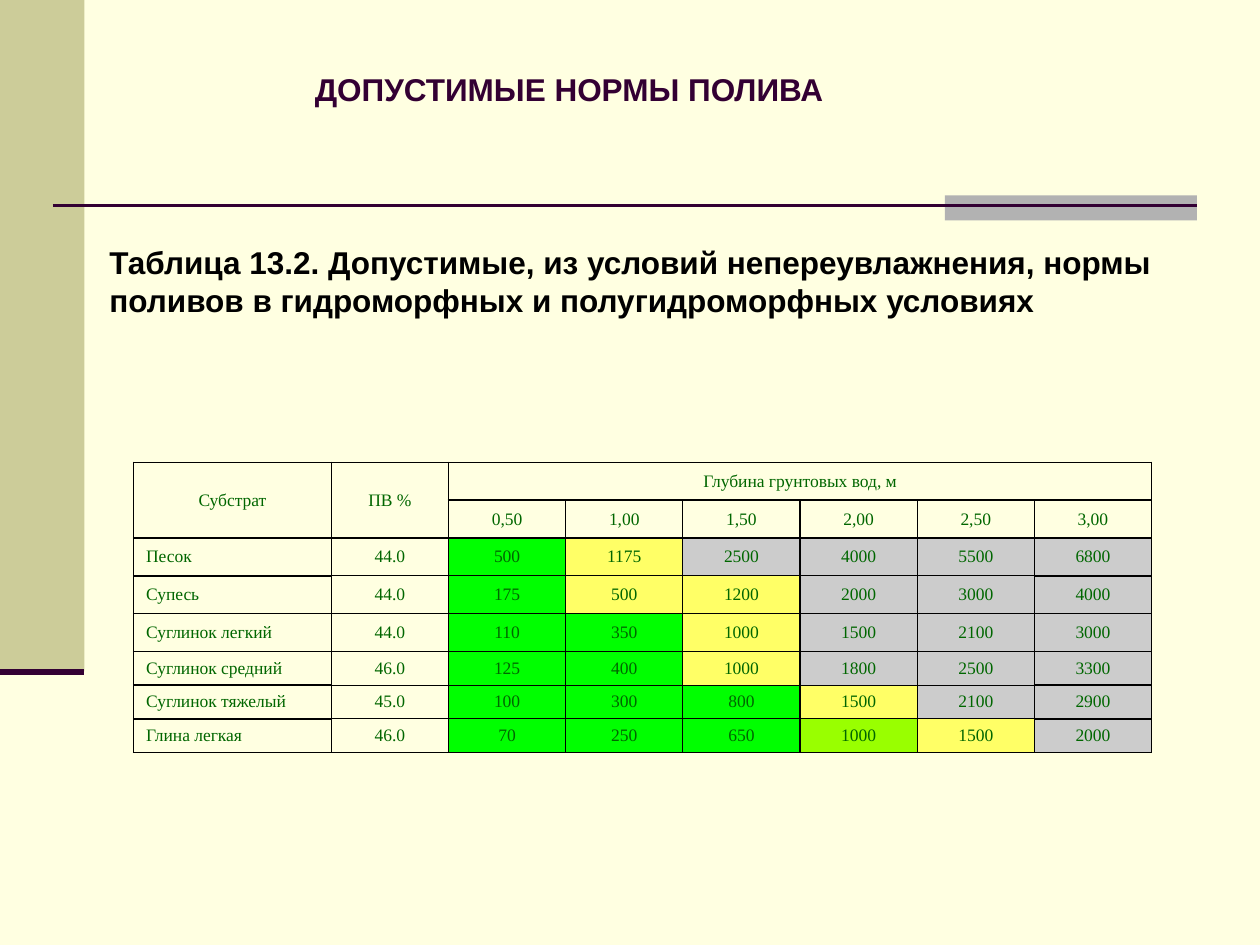
from dataclasses import dataclass
from typing import NamedTuple

from lxml.etree import SubElement as Sub
from pptx import Presentation
from pptx.dml.color import RGBColor as Rgb
from pptx.enum.shapes import MSO_CONNECTOR as Link, MSO_SHAPE as Kind
from pptx.enum.text import MSO_ANCHOR as Anchor, PP_ALIGN as Align
from pptx.oxml.ns import qn
from pptx.util import Inches, Pt


@dataclass(frozen=True)
class Theme:
    back: str = "FFFFE1"
    side: str = "CCCC99"
    tab: str = "B2B2B2"
    plum: str = "330033"
    ink: str = "000000"
    cell: str = "006600"
    head: str = "Arial"
    body: str = "Times New Roman"
    big: float = 18
    small: float = 10
    thin: float = 0.75
    thick: float = 1


class Box(NamedTuple):
    x: float
    y: float
    w: float
    h: float


class Bar(NamedTuple):
    box: Box
    fill: str


class Rule(NamedTuple):
    x1: float
    x2: float
    y: float
    width: float


class Soil(NamedTuple):
    name: str
    cap: str
    rates: tuple[int, ...]
    tints: str


THEME = Theme()
TINTS = {"g": "00FF00", "l": "99FF00", "y": "FFFF66", "s": "CCCCCC"}
BARS = [
    Bar(Box(0, 0, 0.67, 5.33), THEME.side),
    Bar(Box(7.5, 1.55, 2, 0.2), THEME.tab),
]
RULES = [Rule(0.42, 9.5, 1.63, 1.5), Rule(0, 0.67, 5.33, 3.5)]
DEPTHS = ["0,50", "1,00", "1,50", "2,00", "2,50", "3,00"]
SOILS = [
    Soil("Песок", "44.0", (500, 1175, 2500, 4000, 5500, 6800), "gyssss"),
    Soil("Супесь", "44.0", (175, 500, 1200, 2000, 3000, 4000), "gyysss"),
    Soil("Суглинок легкий", "44.0", (110, 350, 1000, 1500, 2100, 3000), "ggysss"),
    Soil("Суглинок средний", "46.0", (125, 400, 1000, 1800, 2500, 3300), "ggysss"),
    Soil("Суглинок тяжелый", "45.0", (100, 300, 800, 1500, 2100, 2900), "gggyss"),
    Soil("Глина легкая", "46.0", (70, 250, 650, 1000, 1500, 2000), "ggglys"),
]
COLS = [1.57] + [0.93] * 7
ROWS = [0.3] * 5 + [0.25] * 3


def rgb(code: str) -> Rgb:
    return Rgb.from_string(code)


def place(box: Box) -> list[Inches]:
    return [Inches(v) for v in box]


def style(para, face: str, size: float, color: str, bold: bool = False) -> None:
    font = para.font
    font.name, font.size, font.bold = face, Pt(size), bold
    font.color.rgb = rgb(color)


def draw_bar(slide, bar: Bar) -> None:
    shape = slide.shapes.add_shape(Kind.RECTANGLE, *place(bar.box))
    shape.shadow.inherit = False
    shape.fill.solid()
    shape.fill.fore_color.rgb = rgb(bar.fill)
    shape.line.fill.background()


def draw_rule(slide, rule: Rule) -> None:
    y = Inches(rule.y)
    line = slide.shapes.add_connector(
        Link.STRAIGHT, Inches(rule.x1), y, Inches(rule.x2), y)
    line.line.color.rgb = rgb(THEME.plum)
    line.line.width = Pt(rule.width)
    Sub(line._element.spPr, qn("a:effectLst"))


def draw_text(slide, box: Box, text: str, color: str, anchor: Anchor):
    frame = slide.shapes.add_textbox(*place(box)).text_frame
    frame.word_wrap = True
    frame.vertical_anchor = anchor
    para = frame.paragraphs[0]
    para.text = text
    style(para, THEME.head, THEME.big, color, True)
    return para


def edge(cell, side: str, width: float) -> None:
    props = cell._tc.get_or_add_tcPr()
    line = Sub(props, qn(f"a:ln{side}"), w=str(Pt(width)))
    Sub(Sub(line, qn("a:solidFill")), qn("a:srgbClr"), val=THEME.ink)


def frame_cell(cell, row: int, col: int) -> None:
    """Outer columns and the top row are heavier, as are edges they share."""
    heavy = row == 0 or col in (0, 7)
    shared = {"L": col == 1 or (row == 1 and col == 2),
              "R": col == 6, "T": row == 1, "B": False}
    for side, near in shared.items():
        edge(cell, side, THEME.thick if heavy or near else THEME.thin)


def fill_cell(cell, text: str, tint: str | None, align: Align) -> None:
    if tint:
        cell.fill.solid()
        cell.fill.fore_color.rgb = rgb(tint)
    else:
        cell.fill.background()
    cell.vertical_anchor = Anchor.MIDDLE
    para = cell.text_frame.paragraphs[0]
    para.text = text
    para.alignment = align
    style(para, THEME.body, THEME.small, THEME.cell)


def draw_table(slide) -> None:
    box = Box(1.06, 3.67, sum(COLS), sum(ROWS))
    table = slide.shapes.add_table(len(ROWS), len(COLS), *place(box)).table
    table.first_row = table.horz_banding = False
    for col, width in zip(table.columns, COLS):
        col.width = Inches(width)
    for row, height in zip(table.rows, ROWS):
        row.height = Inches(height)

    # Two header rows, then one row per soil
    texts = [["Субстрат", "ПВ %", "Глубина грунтовых вод, м"] + [""] * 5,
             ["", ""] + DEPTHS]
    texts += [[s.name, s.cap, *map(str, s.rates)] for s in SOILS]
    for r, line in enumerate(texts):
        for c, text in enumerate(line):
            cell = table.cell(r, c)
            frame_cell(cell, r, c)
            data = r > 1 and c > 1
            tint = TINTS[SOILS[r - 2].tints[c - 2]] if data else None
            align = Align.LEFT if r > 1 and c == 0 else Align.CENTER
            fill_cell(cell, text, tint, align)

    # Merged headings
    for c in (0, 1):
        table.cell(0, c).merge(table.cell(1, c))
    table.cell(0, 2).merge(table.cell(0, 7))


def main() -> None:
    deck = Presentation()
    deck.slide_width, deck.slide_height = Inches(10), Inches(7.5)
    slide = deck.slides.add_slide(deck.slide_layouts[6])
    slide.background.fill.solid()
    slide.background.fill.fore_color.rgb = rgb(THEME.back)

    # Side band, tab and rules
    for bar in BARS:
        draw_bar(slide, bar)
    for rule in RULES:
        draw_rule(slide, rule)

    # Title, table and its caption
    draw_text(slide, Box(2.4, 0.44, 4.68, 0.53), "ДОПУСТИМЫЕ НОРМЫ ПОЛИВА",
              THEME.plum, Anchor.MIDDLE)
    draw_table(slide)
    note = draw_text(
        slide, Box(0.27, 1.88, 8.98, 1),
        "Таблица 13.2. Допустимые, из условий непереувлажнения, нормы "
        "поливов в гидроморфных и полугидроморфных условиях",
        THEME.ink, Anchor.TOP)
    note.space_before = Pt(3.6)
    note._p.get_or_add_pPr().set("marL", str(Inches(0.5)))

    deck.save("out.pptx")


if __name__ == "__main__":
    main()
